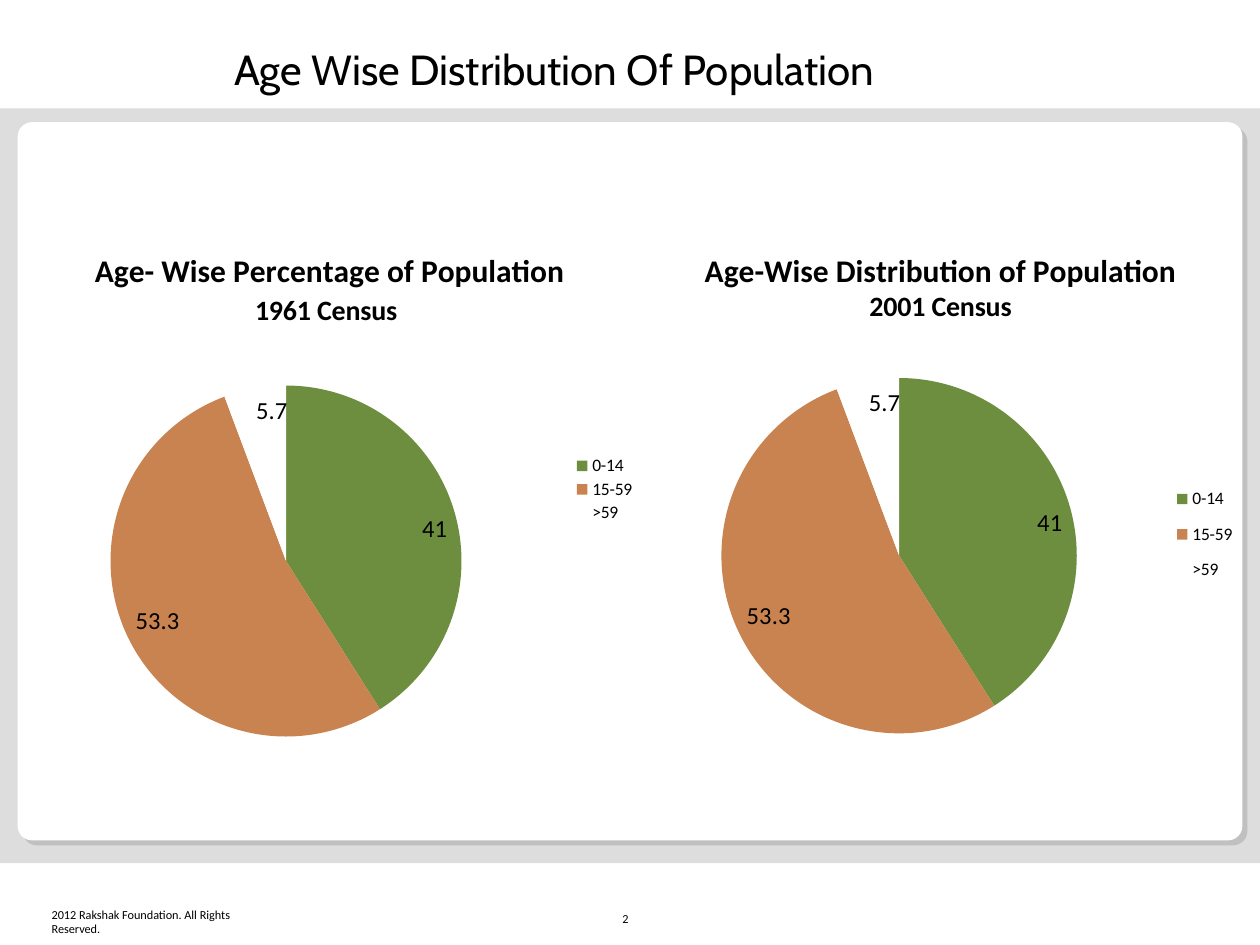
import dataclasses

import lxml.etree
import pptx
import pptx.chart.data
import pptx.dml.color
import pptx.enum.chart
import pptx.enum.shapes
import pptx.enum.text
import pptx.oxml.ns
import pptx.util

Inches = pptx.util.Inches
Pt = pptx.util.Pt
qn = pptx.oxml.ns.qn
Anchor = pptx.enum.text.MSO_ANCHOR
Align = pptx.enum.text.PP_ALIGN


@dataclasses.dataclass(frozen=True)
class Theme:
    heading_font: str = "Cabin"
    body_font: str = "Calibri"
    ink: str = "000000"
    paper: str = "FFFFFF"
    band: str = "DDDDDD"
    panel_shadow: str = "C0C0C0"
    slices: tuple = ("6C8E3E", "C88350", "FFFFFF")
    title_size: int = 24
    label_size: int = 14
    legend_size: int = 10
    footer_size: int = 7


THEME = Theme()
AGE_GROUPS = ("0-14", "15-59", ">59")

# Heading lines hold (text, size) runs; layouts are fractions of the chart box
CENSUS_CHARTS = [
    {
        "box": (0, 1.78, 5.16, 4.21),
        "heading": [[("Age- Wise Percentage of Population", 18)],
                    [("1961 Census", 16), (" ", 18)]],
        "shares": (41, 53.3, 5.7),
        "plot": (0.17, 0.3, 0.54, 0.67),
        "legend": (0.88, 0.43, 0.1, 0.14),
    },
    {
        "box": (4.84, 1.78, 5.16, 4.21),
        "heading": [[("Age-Wise Distribution of Population", 18)],
                    [("2001 Census", 16)]],
        "shares": (41, 53.3, 5.7),
        "plot": (0.17, 0.29, 0.55, 0.67),
        "legend": (0.86, 0.47, 0.11, 0.23),
    },
]


def rgb(value):
    return pptx.dml.color.RGBColor.from_string(value)


def lengths(box):
    return [Inches(value) for value in box]


def set_font(font, size, name=THEME.body_font, bold=False):
    settings = {"size": Pt(size), "name": name, "bold": bold}
    for attribute, value in settings.items():
        setattr(font, attribute, value)
    font.color.rgb = rgb(THEME.ink)


def set_layout(parent, fractions, inner=False):
    """Give a chart part a manual layout: x, y and, if given, width, height."""
    for old in parent.findall(qn("c:layout")):
        parent.remove(old)
    layout = lxml.etree.Element(qn("c:layout"))
    manual = lxml.etree.SubElement(layout, qn("c:manualLayout"))
    entries = [("layoutTarget", "inner")] if inner else []
    entries += [("xMode", "edge"), ("yMode", "edge")]
    entries += list(zip("xywh", fractions))
    for tag, value in entries:
        lxml.etree.SubElement(manual, qn("c:" + tag)).set("val", str(value))
    overlay = parent.find(qn("c:overlay"))
    if overlay is None:
        parent.insert(0, layout)
    else:
        overlay.addprevious(layout)


def add_backdrop(page, box):
    """Grey band with a white rounded panel and its offset shadow."""
    left, top, width, height = box
    shapes = pptx.enum.shapes.MSO_SHAPE
    panel = (left + 0.14, top + 0.11, width - 0.28, 5.7)
    shade = (panel[0] + 0.04, panel[1] + 0.04, *panel[2:])
    for kind, area, color in (
        (shapes.RECTANGLE, box, THEME.band),
        (shapes.ROUNDED_RECTANGLE, shade, THEME.panel_shadow),
        (shapes.ROUNDED_RECTANGLE, panel, THEME.paper),
    ):
        shape = page.shapes.add_shape(kind, *lengths(area))
        shape.shadow.inherit = False
        shape.fill.solid()
        shape.fill.fore_color.rgb = rgb(color)
        shape.line.fill.background()
        if kind == shapes.ROUNDED_RECTANGLE:
            shape.adjustments[0] = 0.02


def place_title(page, box, text):
    title = page.shapes.title
    title.left, title.top, title.width, title.height = lengths(box)
    frame = title.text_frame
    frame.auto_size = pptx.enum.text.MSO_AUTO_SIZE.NONE
    frame.vertical_anchor = Anchor.MIDDLE
    frame.text = text
    para = frame.paragraphs[0]
    para.alignment = Align.CENTER
    para.line_spacing = 0.9
    set_font(para.runs[0].font, THEME.title_size, THEME.heading_font)


def add_small_text(page, box, text, margins):
    frame = page.shapes.add_textbox(*lengths(box)).text_frame
    frame.word_wrap = True
    frame.vertical_anchor = Anchor.BOTTOM
    for side, margin in zip(("left", "top", "right", "bottom"), margins):
        setattr(frame, "margin_" + side, Inches(margin))
    span = frame.paragraphs[0].add_run()
    span.text = text
    set_font(span.font, THEME.footer_size)


def add_census_chart(page, box, heading, shares, plot, legend):
    data = pptx.chart.data.CategoryChartData()
    data.categories = AGE_GROUPS
    data.add_series("Series 1", shares)
    chart = page.shapes.add_chart(
        pptx.enum.chart.XL_CHART_TYPE.PIE, *lengths(box), data).chart
    set_font(chart.font, THEME.legend_size)

    # Two-line heading
    frame = chart.chart_title.text_frame
    for index, line in enumerate(heading):
        para = frame.add_paragraph() if index else frame.paragraphs[0]
        para.alignment = Align.CENTER
        for text, size in line:
            span = para.add_run()
            span.text = text
            set_font(span.font, size, bold=True)

    # Slices and their values
    pie = chart.plots[0]
    pie.vary_by_categories = True
    for index, color in enumerate(THEME.slices):
        point = pie.series[0].points[index].format
        point.fill.solid()
        point.fill.fore_color.rgb = rgb(color)
        point.line.fill.background()
    pie.has_data_labels = True
    labels = pie.data_labels
    labels.show_value = True
    labels.show_percentage = False
    labels.position = pptx.enum.chart.XL_LABEL_POSITION.INSIDE_END
    set_font(labels.font, THEME.label_size)

    # Legend and positions
    chart.has_legend = True
    chart.legend.position = pptx.enum.chart.XL_LEGEND_POSITION.RIGHT
    chart.legend.include_in_layout = False
    set_font(chart.legend.font, THEME.legend_size)
    root = chart.element.find(qn("c:chart"))
    set_layout(root.find(qn("c:title")), (0.14, 0.04))
    set_layout(root.find(qn("c:plotArea")), plot, inner=True)
    set_layout(root.find(qn("c:legend")), legend)


def main():
    deck = pptx.Presentation()
    deck.slide_width, deck.slide_height = Inches(10), Inches(7.5)
    page = deck.slides.add_slide(deck.slide_layouts.get_by_name("Title Only"))
    add_backdrop(page, (0, 0.86, 10, 5.99))
    place_title(page, (1.1, 0.34, 6.67, 0.46),
                "Age Wise Distribution Of Population ")
    for census in CENSUS_CHARTS:
        add_census_chart(page, **census)
    add_small_text(page, (0.41, 7.19, 1.65, 0.24),
                   "2012 Rakshak Foundation. All Rights Reserved.",
                   (0, 0, 0, 0))
    add_small_text(page, (4.84, 7.06, 0.32, 0.34), "2",
                   (0.1, 0.05, 0.1, 0.05))
    deck.save("out.pptx")


if __name__ == "__main__":
    main()
